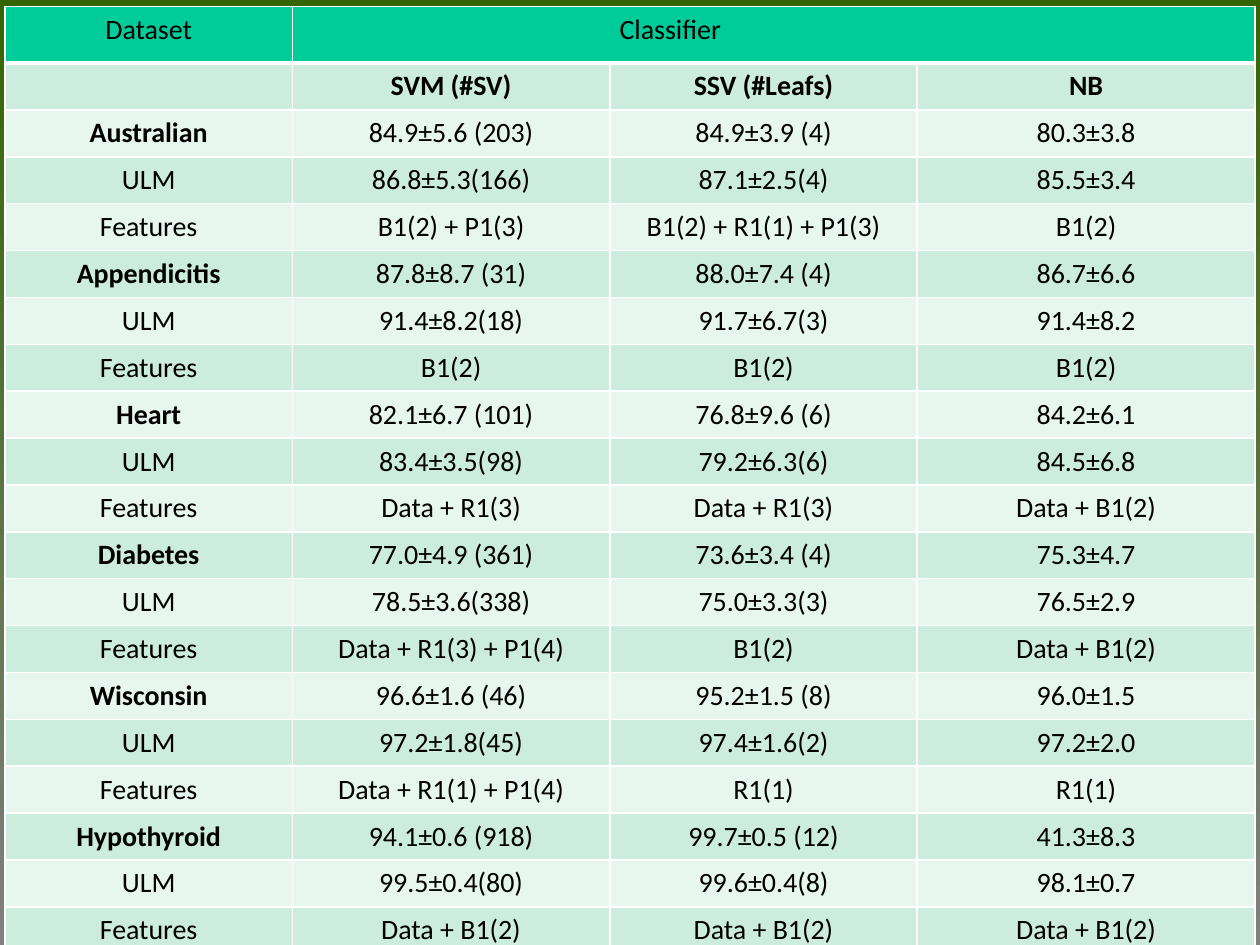
from dataclasses import dataclass

from lxml.etree import SubElement
from pptx import Presentation
from pptx.dml.color import RGBColor
from pptx.enum.text import PP_ALIGN as Align
from pptx.oxml.ns import qn
from pptx.util import Pt


@dataclass(frozen=True)
class Theme:
    font: str = "Calibri"
    size: float = 16
    ink: str = "000000"
    header: str = "00CC99"
    dark_band: str = "CCECDE"
    light_band: str = "E7F6EF"
    rule: str = "FFFFFF"
    rule_width: float = 1
    header_rule_width: float = 3
    backdrop: tuple = ("336600", "808080")


THEME = Theme()
COLUMN_WIDTHS = (164.16, 181.44, 175.68, 192.96)
HEADER_HEIGHT = 32.4
ROW_HEIGHT = 26.64
CLASSIFIER_INSET = 187

CLASSIFIERS = ("", "SVM (#SV)", "SSV (#Leafs)", "NB")
RESULTS = {
    "Australian": (
        ("84.9±5.6 (203)", "84.9±3.9 (4)", "80.3±3.8"),
        ("86.8±5.3(166)", "87.1±2.5(4)", "85.5±3.4"),
        ("B1(2) + P1(3)", "B1(2) + R1(1) + P1(3)", "B1(2)"),
    ),
    "Appendicitis": (
        ("87.8±8.7 (31)", "88.0±7.4 (4)", "86.7±6.6"),
        ("91.4±8.2(18)", "91.7±6.7(3)", "91.4±8.2"),
        ("B1(2)", "B1(2)", "B1(2)"),
    ),
    "Heart": (
        ("82.1±6.7 (101)", "76.8±9.6 (6)", "84.2±6.1"),
        ("83.4±3.5(98)", "79.2±6.3(6)", "84.5±6.8"),
        ("Data + R1(3)", "Data + R1(3)", "Data + B1(2)"),
    ),
    "Diabetes": (
        ("77.0±4.9 (361)", "73.6±3.4 (4)", "75.3±4.7"),
        ("78.5±3.6(338)", "75.0±3.3(3)", "76.5±2.9"),
        ("Data + R1(3) + P1(4)", "B1(2)", "Data + B1(2)"),
    ),
    "Wisconsin": (
        ("96.6±1.6 (46)", "95.2±1.5 (8)", "96.0±1.5"),
        ("97.2±1.8(45)", "97.4±1.6(2)", "97.2±2.0"),
        ("Data + R1(1) + P1(4)", "R1(1)", "R1(1)"),
    ),
    "Hypothyroid": (
        ("94.1±0.6 (918)", "99.7±0.5 (12)", "41.3±8.3"),
        ("99.5±0.4(80)", "99.6±0.4(8)", "98.1±0.7"),
        ("Data + B1(2)", "Data + B1(2)", "Data + B1(2)"),
    ),
}


def color(value):
    return RGBColor.from_string(value)


def paint_backdrop(slide):
    fill = slide.background.fill
    fill.gradient()
    fill.gradient_angle = 270
    for stop, value in zip(fill.gradient_stops, THEME.backdrop):
        stop.color.rgb = color(value)


def rule_cell(cell, widths):
    properties = cell._tc.get_or_add_tcPr()
    for side, width in widths.items():
        line = SubElement(properties, qn(f"a:ln{side}"), w=str(Pt(width)))
        fill = SubElement(line, qn("a:solidFill"))
        SubElement(fill, qn("a:srgbClr"), val=THEME.rule)


def style_cell(cell, band, is_header, is_below_header):
    widths = dict.fromkeys("LRTB", THEME.rule_width)
    if is_header:
        widths["B"] = THEME.header_rule_width
    if is_below_header:
        widths["T"] = THEME.header_rule_width
    rule_cell(cell, widths)
    cell.fill.solid()
    cell.fill.fore_color.rgb = color(band)


def write_cell(cell, text, bold):
    paragraph = cell.text_frame.paragraphs[0]
    paragraph.alignment = Align.CENTER
    if not text:
        SubElement(paragraph._p, qn("a:endParaRPr"), sz=str(THEME.size * 100))
        return
    run = paragraph.add_run()
    run.text = text
    run.font.name = THEME.font
    run.font.size = Pt(THEME.size)
    run.font.bold = bold
    run.font.color.rgb = color(THEME.ink)


def result_rows():
    rows = [("Dataset", "Classifier", "", ""), CLASSIFIERS]
    for dataset, (baseline, ulm, features) in RESULTS.items():
        rows += [(dataset, *baseline), ("ULM", *ulm), ("Features", *features)]
    return rows


def add_results_table(slide, left, top):
    rows = result_rows()
    height = HEADER_HEIGHT + ROW_HEIGHT * (len(rows) - 1)
    frame = slide.shapes.add_table(
        len(rows), len(COLUMN_WIDTHS),
        Pt(left), Pt(top), Pt(sum(COLUMN_WIDTHS)), Pt(height),
    )
    results = frame.table
    results.first_row = results.horz_banding = False
    for column, width in zip(results.columns, COLUMN_WIDTHS):
        column.width = Pt(width)

    for row_index, texts in enumerate(rows):
        is_header = row_index == 0
        results.rows[row_index].height = Pt(HEADER_HEIGHT if is_header else ROW_HEIGHT)
        band = THEME.dark_band if row_index % 2 else THEME.light_band
        for column_index, text in enumerate(texts):
            cell = results.cell(row_index, column_index)
            style_cell(cell, THEME.header if is_header else band, is_header, row_index == 1)
            write_cell(cell, text, row_index == 1 or text in RESULTS)

    classifier = results.cell(0, 1)
    classifier.merge(results.cell(0, len(COLUMN_WIDTHS) - 1))
    classifier.margin_left = Pt(CLASSIFIER_INSET)
    classifier.text_frame.paragraphs[0].alignment = Align.LEFT


def main():
    presentation = Presentation()
    presentation.slide_width, presentation.slide_height = Pt(720), Pt(540)
    slide = presentation.slides.add_slide(presentation.slide_layouts[6])
    paint_backdrop(slide)
    add_results_table(slide, left=2.88, top=3.6)
    presentation.save("out.pptx")


if __name__ == "__main__":
    main()
